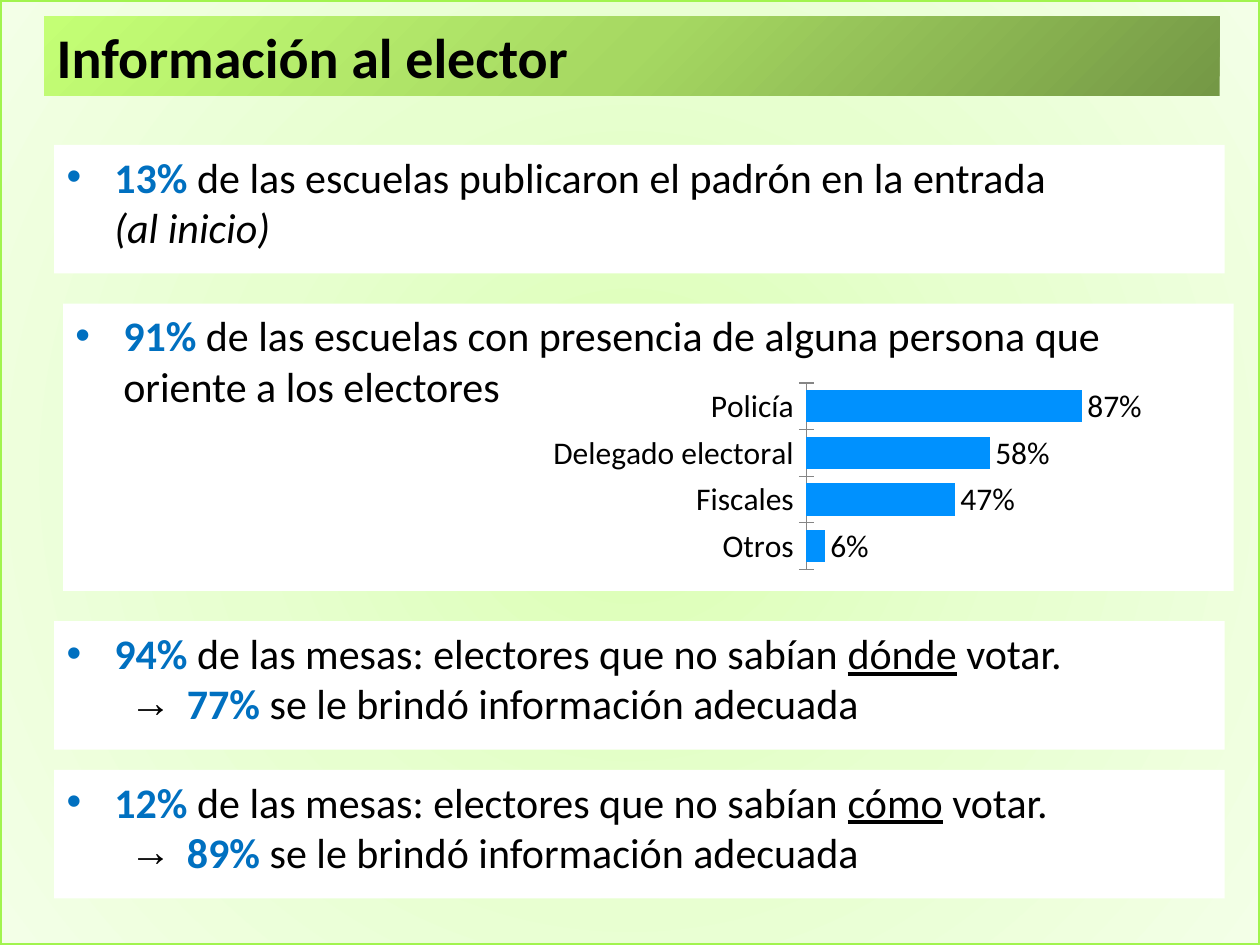
from lxml import etree
from pptx import Presentation
from pptx.chart.data import CategoryChartData
from pptx.dml.color import RGBColor
from pptx.enum.chart import XL_CHART_TYPE, XL_LABEL_POSITION, XL_TICK_MARK
from pptx.enum.shapes import MSO_SHAPE
from pptx.enum.text import MSO_ANCHOR, MSO_AUTO_SIZE, PP_ALIGN
from pptx.oxml import parse_xml
from pptx.oxml.ns import nsdecls, qn
from pptx.util import Inches, Pt

RECTANGLE = MSO_SHAPE.RECTANGLE
BAR_CLUSTERED = XL_CHART_TYPE.BAR_CLUSTERED
OUTSIDE_END = XL_LABEL_POSITION.OUTSIDE_END
CROSS = XL_TICK_MARK.CROSS
LEFT = PP_ALIGN.LEFT
TOP, MIDDLE = MSO_ANCHOR.TOP, MSO_ANCHOR.MIDDLE
NO_AUTOFIT = MSO_AUTO_SIZE.NONE

BLACK = RGBColor(0x00, 0x00, 0x00)
WHITE = RGBColor(0xFF, 0xFF, 0xFF)
BLUE = RGBColor(0x00, 0x70, 0xC0)
BAR_BLUE = RGBColor(0x00, 0x91, 0xFE)
BORDER_GREEN = RGBColor(0xA1, 0xF4, 0x4E)
AXIS_GREY = RGBColor(0x86, 0x86, 0x86)
PAGE_STOPS = [RGBColor(0xDA, 0xFF, 0xB2), RGBColor(0xE7, 0xFF, 0xCF), RGBColor(0xF3, 0xFF, 0xE7)]
TITLE_STOPS = [RGBColor(0x74, 0x98, 0x45), RGBColor(0xA6, 0xD8, 0x62), RGBColor(0xC4, 0xFF, 0x75)]
RADIAL = ('<a:path path="circle"><a:fillToRect l="50000" t="50000" '
          'r="50000" b="50000"/></a:path>')
DIAGONAL = '<a:lin ang="13500000" scaled="1"/>'

FONT = "Calibri"
NORMAL = {"name": FONT, "size": Pt(24), "bold": False}
FIGURE = {**NORMAL, "bold": True, "color": BLUE}
ITALIC = {**NORMAL, "italic": True}
UNDERLINED = {**NORMAL, "underline": True}
TITLE = {"name": FONT, "size": Pt(32), "bold": True}
CHART_TEXT = {"name": FONT, "size": Pt(18)}

PANEL_LEFT, PANEL_WIDTH, PANEL_HEIGHT = 0.43, 9.29, 1.02
SHARES = {"Otros": 0.06, "Fiscales": 0.47, "Delegado electoral": 0.58, "Policía": 0.87}


def format_font(font, values):
    font.color.rgb = values.get("color", BLACK)
    for name, value in values.items():
        if name != "color":
            setattr(font, name, value)


def fill_gradient(shape, colours, direction):
    stops = "".join(
        f'<a:gs pos="{position}"><a:srgbClr val="{colour}"/></a:gs>'
        for position, colour in zip((0, 50000, 100000), colours))
    shape.element.spPr.append(parse_xml(
        f'<a:gradFill {nsdecls("a")} rotWithShape="1"><a:gsLst>{stops}</a:gsLst>'
        f'{direction}</a:gradFill>'))


def set_bullet(paragraph, symbol, margin):
    properties = paragraph._p.get_or_add_pPr()
    properties.set("marL", str(Inches(margin)))
    properties.set("indent", str(Inches(-0.38)))
    etree.SubElement(properties, qn("a:buFont"), typeface="Arial")
    etree.SubElement(properties, qn("a:buChar"), char=symbol)


def add_page(slide, left, top, width, height):
    page = slide.shapes.add_shape(
        RECTANGLE, Inches(left), Inches(top), Inches(width), Inches(height))
    page.shadow.inherit = False
    fill_gradient(page, PAGE_STOPS, RADIAL)
    page.line.color.rgb = BORDER_GREEN
    page.line.width = Pt(2)
    slide.shapes.element.insert(2, page.element)


def add_title(slide, left, top, width, height):
    title = slide.shapes.title
    title.left, title.top = Inches(left), Inches(top)
    title.width, title.height = Inches(width), Inches(height)
    fill_gradient(title, TITLE_STOPS, DIAGONAL)
    frame = title.text_frame
    frame.text = "Información al elector"
    frame.auto_size = NO_AUTOFIT
    frame.vertical_anchor = MIDDLE
    frame.paragraphs[0].alignment = LEFT
    format_font(frame.paragraphs[0].runs[0].font, TITLE)


def add_panel(slide, left, top, width, height, lines):
    panel = slide.shapes.add_shape(
        RECTANGLE, Inches(left), Inches(top), Inches(width), Inches(height))
    panel.shadow.inherit = False
    panel.fill.solid()
    panel.fill.fore_color.rgb = WHITE
    panel.line.fill.background()
    frame = panel.text_frame
    frame.word_wrap = True
    frame.vertical_anchor = TOP
    for index, runs in enumerate(lines):
        paragraph = frame.add_paragraph() if index else frame.paragraphs[0]
        paragraph.alignment = LEFT
        paragraph.level = index
        set_bullet(paragraph, "→" if index else "•", 0.88 if index else 0.38)
        for text, values in runs:
            if text == "\n":
                paragraph.add_line_break()
                continue
            run = paragraph.add_run()
            run.text = text
            format_font(run.font, values)


def add_voting_panel(slide, top, share, question, informed):
    add_panel(slide, PANEL_LEFT, top, PANEL_WIDTH, PANEL_HEIGHT, [
        [(f"{share} ", FIGURE), ("de las mesas: electores que no sabían ", NORMAL),
         (question, UNDERLINED), (" votar.", NORMAL)],
        [(" ", NORMAL), (f"{informed} ", FIGURE),
         ("se le brindó información adecuada", NORMAL)],
    ])


def set_plot_layout(chart, **fractions):
    area = chart.element.chart.plotArea
    for layout in area.findall(qn("c:layout")):
        area.remove(layout)
    edges = "".join(f'<c:{name} val="{value}"/>' for name, value in fractions.items())
    area.insert(0, parse_xml(
        f'<c:layout {nsdecls("c")}><c:manualLayout><c:layoutTarget val="inner"/>'
        f'<c:xMode val="edge"/><c:yMode val="edge"/>{edges}</c:manualLayout></c:layout>'))


def add_helpers_chart(slide, left, top, width, height):
    data = CategoryChartData(number_format="0%")
    data.categories = list(SHARES)
    data.add_series("Series 1", list(SHARES.values()))
    chart = slide.shapes.add_chart(
        BAR_CLUSTERED, Inches(left), Inches(top), Inches(width), Inches(height), data).chart
    chart.has_legend = False
    chart.has_title = False
    format_font(chart.font, CHART_TEXT)
    set_plot_layout(chart, x=0.445, y=0.119, w=0.512, h=0.762)

    category_axis = chart.category_axis
    category_axis.major_tick_mark = CROSS
    category_axis.format.line.color.rgb = AXIS_GREY
    format_font(category_axis.tick_labels.font, CHART_TEXT)
    value_axis = chart.value_axis
    value_axis.minimum_scale, value_axis.maximum_scale = 0, 1
    value_axis.has_major_gridlines = False
    value_axis.visible = False

    plot = chart.plots[0]
    plot.gap_width, plot.overlap = 44, 29
    plot.vary_by_categories = False
    series = plot.series[0]
    series.format.fill.solid()
    series.format.fill.fore_color.rgb = BAR_BLUE
    labels = series.data_labels
    labels.show_value = True
    labels.number_format = "0%"
    labels.number_format_is_linked = False
    labels.position = OUTSIDE_END
    format_font(labels.font, CHART_TEXT)


def main():
    presentation = Presentation()
    presentation.slide_width, presentation.slide_height = Inches(10), Inches(7.5)
    slide = presentation.slides.add_slide(presentation.slide_layouts[5])
    add_page(slide, 0, 0, 10, 7.5)
    add_title(slide, 0.35, 0.13, 9.33, 0.63)
    add_panel(slide, PANEL_LEFT, 1.15, PANEL_WIDTH, PANEL_HEIGHT, [
        [("13% ", FIGURE), ("de las escuelas publicaron el padrón en la entrada", NORMAL),
         ("\n", NORMAL), ("(al inicio)", ITALIC)],
    ])
    add_panel(slide, 0.5, 2.41, PANEL_WIDTH, 2.28, [
        [("91% ", FIGURE), ("de las escuelas con presencia de alguna persona que "
                            "oriente a los electores", NORMAL)],
    ])
    add_helpers_chart(slide, 4.21, 2.81, 4.92, 1.94)
    add_voting_panel(slide, 4.93, "94%", "dónde", "77%")
    add_voting_panel(slide, 6.11, "12%", "cómo", "89%")
    presentation.save("out.pptx")


if __name__ == "__main__":
    main()
